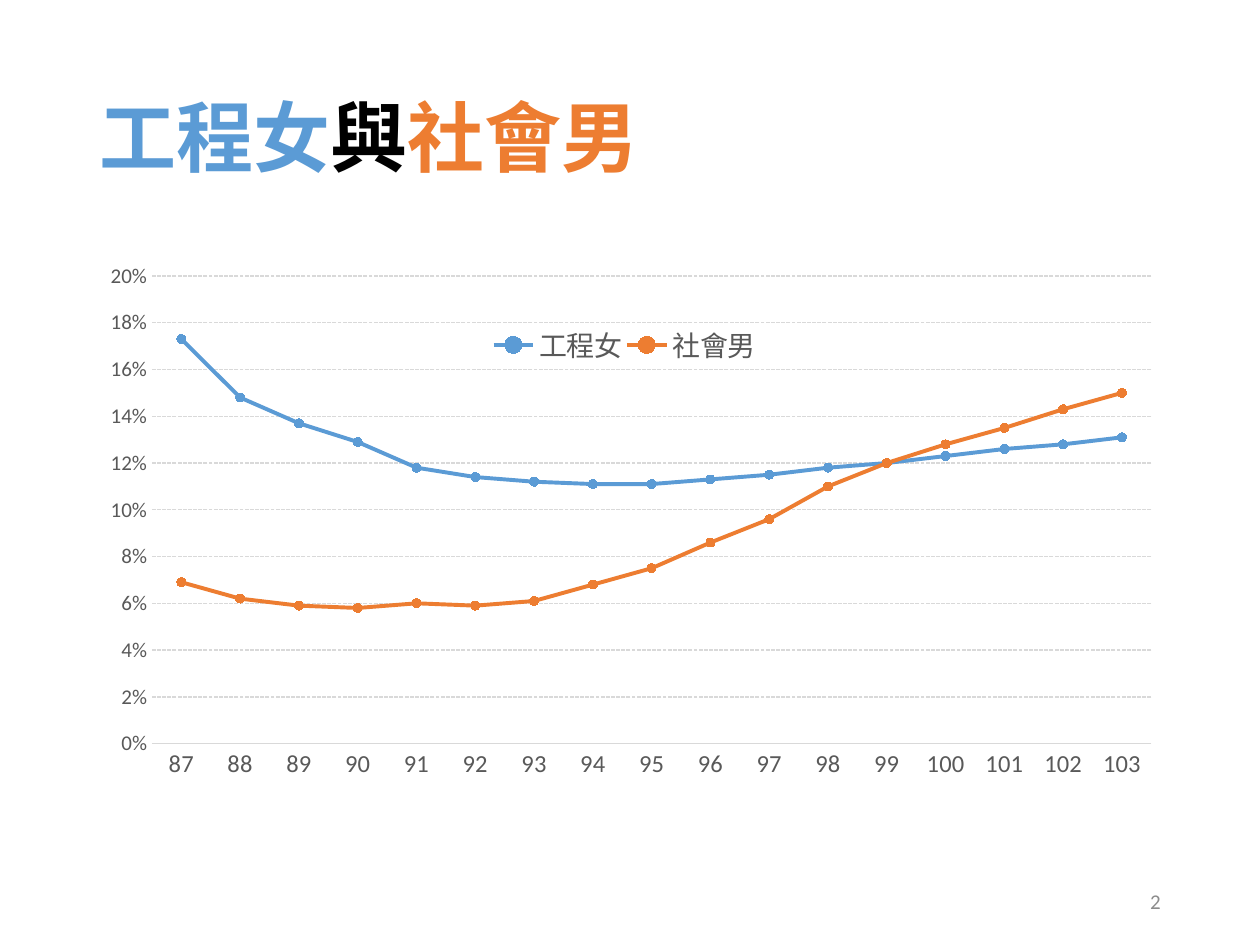
from lxml import etree
from pptx import Presentation, util as u
from pptx.chart.data import CategoryChartData
from pptx.dml.color import RGBColor
from pptx.enum import chart as ch, dml, text
from pptx.oxml.ns import qn

BLUE, ORANGE, GREY, RULE = "5B9BD5", "ED7D31", "595959", "D9D9D9"
LATIN, CJK = "Calibri", "Noto Sans CJK SC"


def rgb(code):
    return RGBColor.from_string(code)


def place(parent, index, inner, x, y, w, h):
    """Give a chart part a manual layout, in fractions of the chart."""
    for old in parent.findall(qn("c:layout")):
        parent.remove(old)
    layout = etree.Element(qn("c:layout"))
    manual = etree.SubElement(layout, qn("c:manualLayout"))
    values = [("xMode", "edge"), ("yMode", "edge"), ("x", x), ("y", y), ("w", w), ("h", h)]
    if inner:
        values.insert(0, ("layoutTarget", "inner"))
    for tag, value in values:
        etree.SubElement(manual, qn("c:" + tag)).set("val", str(value))
    parent.insert(index, layout)


deck = Presentation()
deck.slide_width, deck.slide_height = u.Cm(25.4), u.Cm(19.05)
slide = deck.slides.add_slide(deck.slide_layouts[6])
left, width = u.Cm(1.75), u.Cm(21.9)

# Title, coloured like the two series
title = slide.shapes.add_textbox(left, u.Cm(1.02), width, u.Cm(3.68)).text_frame
title.word_wrap = True
title.vertical_anchor = text.MSO_ANCHOR.MIDDLE
heading = title.paragraphs[0]
heading.line_spacing = 0.9
for words, color in (("工程女", BLUE), ("與", "000000"), ("社會男", ORANGE)):
    run = heading.add_run()
    run.text = words
    run.font.size, run.font.bold, run.font.name = u.Pt(44), True, CJK
    run.font.color.rgb = rgb(color)
    etree.SubElement(run.font._element, qn("a:ea")).set("typeface", CJK)

# Share by year
shares = CategoryChartData(number_format="0%")
shares.categories = [str(year) for year in range(87, 104)]
shares.add_series("工程女", [0.173, 0.148, 0.137, 0.129, 0.118, 0.114, 0.112, 0.111, 0.111,
                          0.113, 0.115, 0.118, 0.12, 0.123, 0.126, 0.128, 0.131])
shares.add_series("社會男", [0.069, 0.062, 0.059, 0.058, 0.06, 0.059, 0.061, 0.068, 0.075,
                          0.086, 0.096, 0.11, 0.12, 0.128, 0.135, 0.143, 0.15])
chart = slide.shapes.add_chart(ch.XL_CHART_TYPE.LINE_MARKERS, left, u.Cm(5.08),
                               width, u.Cm(12.09), shares).chart
chart.has_title = False
chart.font.size, chart.font.name = u.Pt(10), LATIN
chart.font.color.rgb = rgb("000000")
chart.plots[0].vary_by_categories = False

for series, color in zip(chart.plots[0].series, (BLUE, ORANGE)):
    series.smooth = False
    series.format.line.width = u.Pt(2.25)
    series.format.line.color.rgb = rgb(color)
    series.marker.style, series.marker.size = ch.XL_MARKER_STYLE.CIRCLE, 5
    series.marker.format.fill.solid()
    series.marker.format.fill.fore_color.rgb = rgb(color)
    series.marker.format.line.color.rgb = rgb(color)

# Axes
years, percent = chart.category_axis, chart.value_axis
for axis, size in ((years, 14), (percent, 12)):
    axis.major_tick_mark = axis.minor_tick_mark = ch.XL_TICK_MARK.NONE
    axis.tick_labels.font.size, axis.tick_labels.font.name = u.Pt(size), LATIN
    axis.tick_labels.font.color.rgb = rgb(GREY)
percent.minimum_scale, percent.maximum_scale, percent.major_unit = 0, 0.2, 0.02
percent.tick_labels.number_format = "0%"
percent.tick_labels.number_format_is_linked = False
percent.format.line.fill.background()
percent.has_major_gridlines = True
grid = percent.major_gridlines.format.line
for line in (years.format.line, grid):
    line.width = u.Pt(0.75)
    line.color.rgb = rgb(RULE)
grid.dash_style = dml.MSO_LINE.SQUARE_DOT

# Legend inside the plot
chart.has_legend = True
legend = chart.legend
legend.position = ch.XL_LEGEND_POSITION.BOTTOM
legend.include_in_layout = False
legend.font.size, legend.font.name = u.Pt(16), CJK
legend.font.color.rgb = rgb(GREY)
etree.SubElement(legend.font._element, qn("a:ea")).set("typeface", CJK)
place(legend._element, 1, False, 0.37, 0.12, 0.25, 0.07)
place(chart.element.find(".//" + qn("c:plotArea")), 0, True, 0.06, 0.04, 0.92, 0.78)

# Page number
footer = slide.shapes.add_textbox(u.Cm(17.93), u.Cm(17.65), u.Cm(5.72), u.Cm(1.02)).text_frame
footer.word_wrap = True
footer.vertical_anchor = text.MSO_ANCHOR.MIDDLE
number = footer.paragraphs[0]
number.text = "2"
number.alignment = text.PP_ALIGN.RIGHT
number.font.size, number.font.name = u.Pt(12), LATIN
number.font.color.rgb = rgb("8C8C8C")

deck.save("out.pptx")
